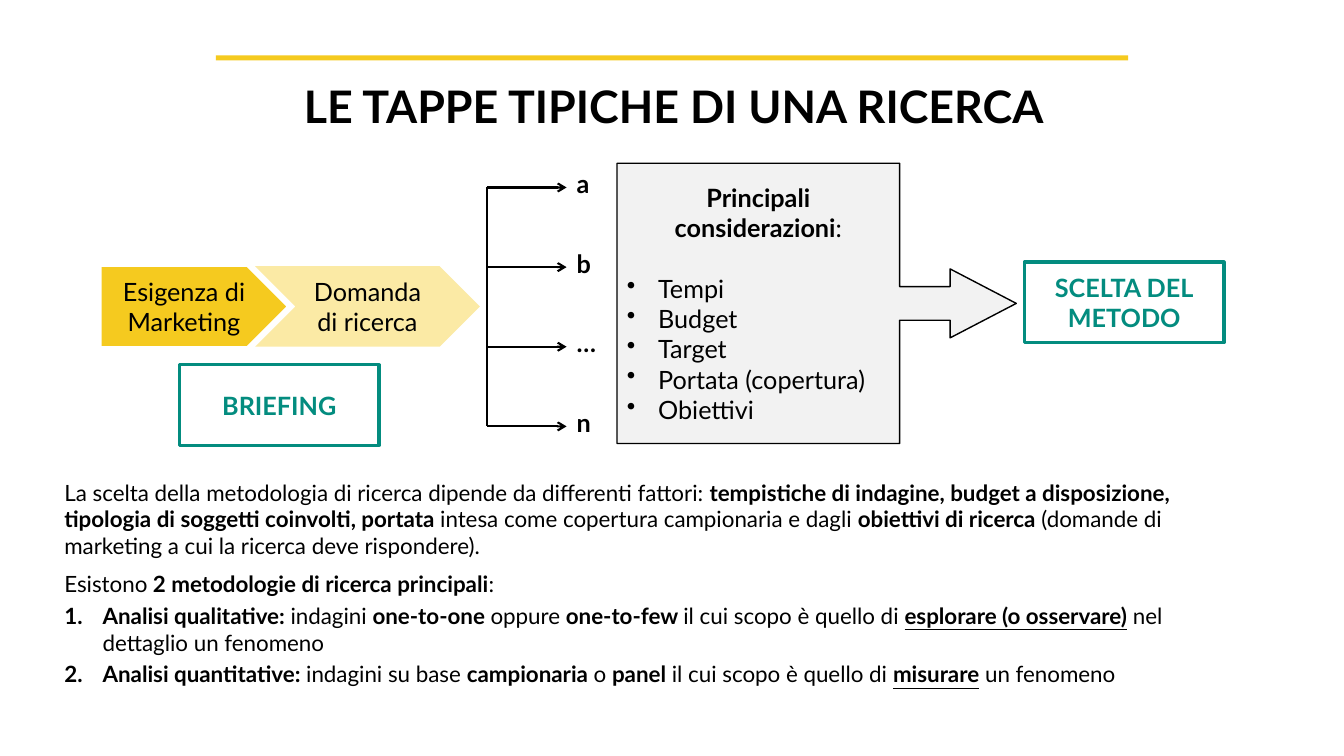
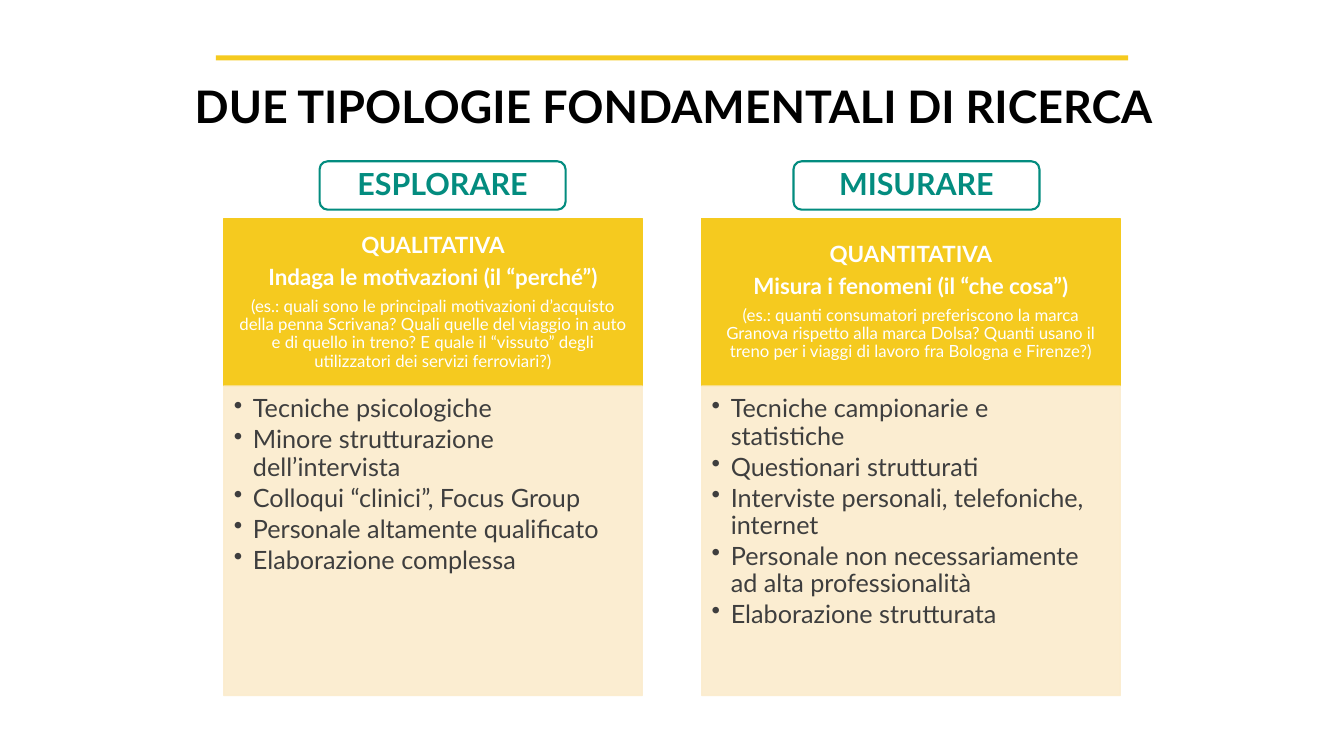
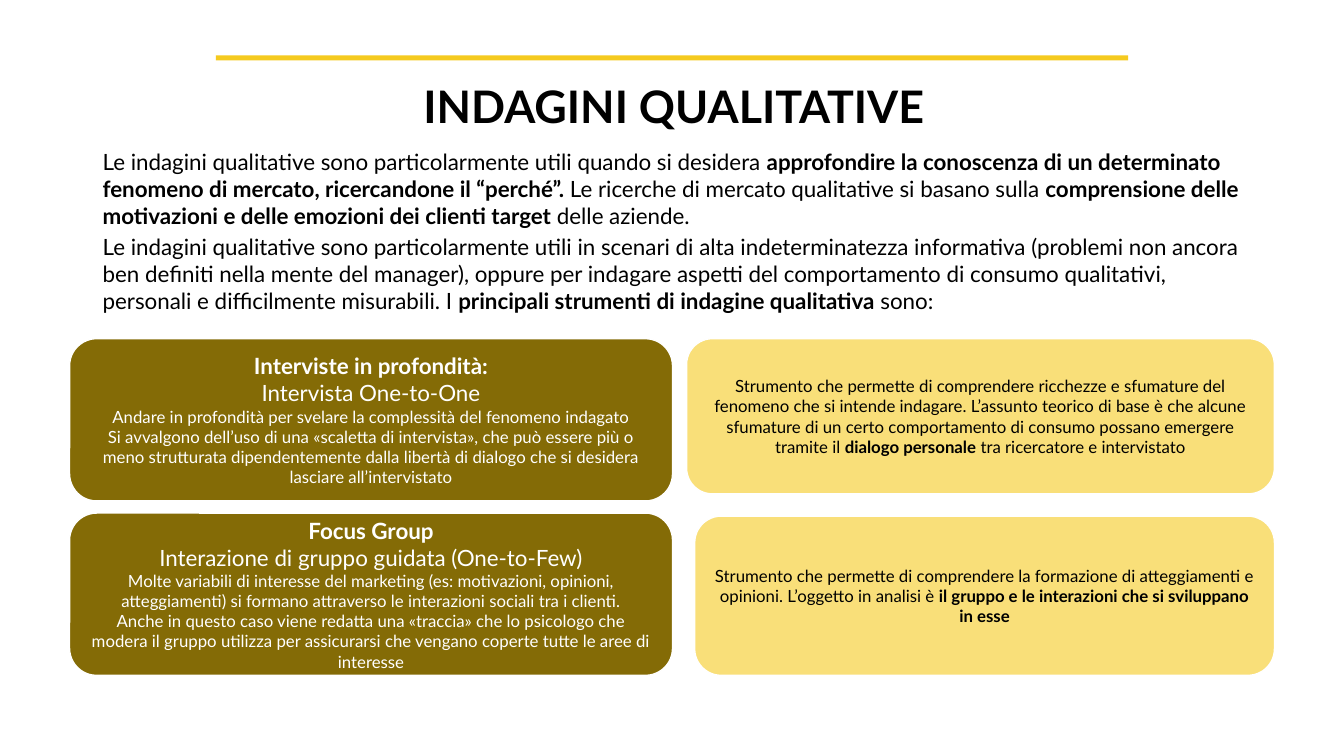
from lxml import etree
from pptx import Presentation
from pptx.dml.color import RGBColor
from pptx.enum.shapes import MSO_CONNECTOR, MSO_SHAPE
from pptx.enum.text import MSO_ANCHOR, PP_ALIGN
from pptx.oxml.ns import qn
from pptx.util import Inches, Pt

CENTER, LEFT = PP_ALIGN.CENTER, PP_ALIGN.LEFT
TOP, MIDDLE = MSO_ANCHOR.TOP, MSO_ANCHOR.MIDDLE
RECT, ROUND = MSO_SHAPE.RECTANGLE, MSO_SHAPE.ROUNDED_RECTANGLE
PENTAGON, CHEVRON = MSO_SHAPE.PENTAGON, MSO_SHAPE.CHEVRON
CALLOUT = MSO_SHAPE.RIGHT_ARROW_CALLOUT
STRAIGHT = MSO_CONNECTOR.STRAIGHT

FONT = "Lato"
COLORS = {
    "black": "000000", "white": "FFFFFF", "text": "3E3E3E", "teal": "038C7F",
    "yellow": "F5CA1F", "pale": "FBEAA5", "light": "F9DF79", "olive": "846B06",
    "cream": "FBECCD", "grey": "F2F2F2",
}

# Content: *...* is bold, _..._ is bold and underlined
STEPS_TITLE = "LE TAPPE TIPICHE DI UNA RICERCA"
BRANCHES = ["a", "b", "…", "n"]
CONSIDERATIONS = ["Tempi", "Budget", "Target", "Portata (copertura)", "Obiettivi"]
METHOD_CHOICE = (
    "La scelta della metodologia di ricerca dipende da differenti fattori: *tempistiche di indagine, "
    "budget a disposizione, tipologia di soggetti coinvolti, portata *intesa come copertura campionaria "
    "e dagli *obiettivi di ricerca* (domande di marketing a cui la ricerca deve rispondere).")
METHODS_INTRO = "Esistono* 2 metodologie di ricerca principali*:"
METHODS = [
    "*Analisi qualitative: *indagini *one-to-one *oppure *one-to-few *il cui scopo è quello di "
    "_esplorare (o osservare)_ nel dettaglio un fenomeno",
    "*Analisi quantitative: *indagini su base *campionaria *o *panel* il cui scopo è quello di "
    "_misurare_ un fenomeno",
]

TYPES_TITLE = "DUE TIPOLOGIE FONDAMENTALI DI RICERCA"
TYPES = [
    {"badge": "ESPLORARE", "name": "QUALITATIVA", "aim": "Indaga le motivazioni (il “perché”)",
     "example": "(es.: quali sono le principali motivazioni d’acquisto della penna Scrivana? Quali quelle "
                "del viaggio in auto e di quello in treno? E quale il “vissuto” degli utilizzatori dei "
                "servizi ferroviari?)",
     "traits": ["Tecniche psicologiche", "Minore strutturazione dell’intervista",
                "Colloqui “clinici”, Focus Group", "Personale altamente qualificato",
                "Elaborazione complessa"]},
    {"badge": "MISURARE", "name": "QUANTITATIVA", "aim": "Misura i fenomeni (il “che cosa”)",
     "example": "(es.: quanti consumatori preferiscono la marca Granova rispetto alla marca Dolsa? Quanti "
                "usano il treno per i viaggi di lavoro fra Bologna e Firenze?)",
     "traits": ["Tecniche campionarie e statistiche", "Questionari strutturati",
                "Interviste personali, telefoniche, internet",
                "Personale non necessariamente ad alta professionalità",
                "Elaborazione strutturata"]},
]

SURVEYS_TITLE = "INDAGINI QUALITATIVE"
SURVEYS_INTRO = [
    "Le indagini qualitative sono particolarmente utili quando si desidera *approfondire la conoscenza "
    "di un determinato fenomeno di mercato, ricercandone il “perché”. *Le ricerche di mercato qualitative "
    "si basano sulla *comprensione delle motivazioni e delle emozioni dei clienti target *delle aziende.",
    "Le indagini qualitative sono particolarmente utili in scenari di alta indeterminatezza informativa "
    "(problemi non ancora ben definiti nella mente del manager), oppure per indagare aspetti del "
    "comportamento di consumo qualitativi, personali e difficilmente misurabili. I *principali strumenti "
    "di indagine qualitativa *sono:",
]
TOOLS = [
    {"name": "*Interviste in profondità:*", "kind": "Intervista One-to-One",
     "details": ["Andare in profondità per svelare la complessità del fenomeno indagato",
                 "Si avvalgono dell’uso di una «scaletta di intervista», che può essere più o meno "
                 "strutturata dipendentemente dalla libertà di dialogo che si desidera lasciare "
                 "all’intervistato"],
     "purpose": "Strumento che permette di comprendere ricchezze e sfumature del fenomeno che si intende "
                "indagare. L’assunto teorico di base è che alcune sfumature di un certo comportamento di "
                "consumo possano emergere tramite il *dialogo personale* tra ricercatore e intervistato",
     "top": 3.36, "purpose_at": (6.81, 3.36, 5.83, 1.54)},
    {"name": "*Focus Group*", "kind": "Interazione di gruppo guidata (One-to-Few)",
     "details": ["Molte variabili di interesse del marketing (es: motivazioni, opinioni, atteggiamenti) si "
                 "formano attraverso le interazioni sociali tra i clienti.",
                 "Anche in questo caso viene redatta una «traccia» che lo psicologo che modera il gruppo "
                 "utilizza per assicurarsi che vengano coperte tutte le aree di interesse"],
     "purpose": "Strumento che permette di comprendere la formazione di atteggiamenti e opinioni. "
                "L’oggetto in analisi è *il gruppo e le interazioni che si sviluppano in esse*",
     "top": 5.09, "purpose_at": (6.89, 5.12, 5.75, 1.58)},
]


def rgb(name):
    return RGBColor.from_string(COLORS[name])


def add_spans(para, text):
    """Split marked text into runs."""
    bold = underline = False
    for part in text.replace("*", "|*|").replace("_", "|_|").split("|"):
        if part == "*":
            bold = not bold
        elif part == "_":
            underline = not underline
        elif part:
            span = para.add_run()
            span.text = part
            if bold or underline:
                span.font.bold = True
            if underline:
                span.font.underline = True


def add_bullet(para, indent, numbered):
    props = para._p.get_or_add_pPr()
    props.set("marL", str(Inches(indent)))
    props.set("indent", str(-Inches(indent)))
    if numbered:
        etree.SubElement(props, qn("a:buAutoNum"), type="arabicPeriod")
    else:
        etree.SubElement(props, qn("a:buChar"), char="•")


def line(text, size=18, color="black", bold=None, align=CENTER, before=0, after=0,
         spacing=None, indent=0, numbered=False):
    """Describe one paragraph."""
    return dict(text=text, size=size, color=color, bold=bold, align=align, before=before,
                after=after, spacing=spacing, indent=indent, numbered=numbered)


def write(shape, lines, anchor=MIDDLE, insets=(0.1, 0.05, 0.1, 0.05), wrap=True):
    frame = shape.text_frame
    frame.word_wrap = wrap
    frame.vertical_anchor = anchor
    frame.margin_left, frame.margin_top, frame.margin_right, frame.margin_bottom = map(Inches, insets)
    for index, item in enumerate(lines):
        para = frame.add_paragraph() if index else frame.paragraphs[0]
        if item["indent"]:
            add_bullet(para, item["indent"], item["numbered"])
        para.alignment = item["align"]
        if item["before"] and index:
            para.space_before = Pt(item["before"])
        if item["after"]:
            para.space_after = Pt(item["after"])
        if item["spacing"]:
            para.line_spacing = item["spacing"]
        para.font.name = FONT
        para.font.size = Pt(item["size"])
        para.font.color.rgb = rgb(item["color"])
        para.font.bold = item["bold"]
        add_spans(para, item["text"])


def add_text(page, at, lines, anchor=TOP, wrap=True):
    write(page.shapes.add_textbox(*map(Inches, at)), lines, anchor, wrap=wrap)


def add_box(page, kind, at, fill=None, border=None, width=1.0, alpha=None):
    box = page.shapes.add_shape(kind, *map(Inches, at))
    box.shadow.inherit = False
    if fill:
        box.fill.solid()
        box.fill.fore_color.rgb = rgb(fill)
    else:
        box.fill.background()
    if border:
        box.line.color.rgb = rgb(border)
        box.line.width = Pt(width)
    else:
        box.line.fill.background()
    if alpha:
        for color in box._element.spPr.iter(qn("a:srgbClr")):
            etree.SubElement(color, qn("a:alpha"), val=str(alpha * 1000))
    return box


def add_line(page, start, end, arrow=False):
    connector = page.shapes.add_connector(STRAIGHT, *map(Inches, start + end))
    connector.line.color.rgb = rgb("black")
    connector.line.width = Pt(1.5)
    if arrow:
        etree.SubElement(connector.line._ln, qn("a:tailEnd"), type="arrow")
    etree.SubElement(connector._element.spPr, qn("a:effectLst"))


def add_page(deck, title):
    """Blank page with the yellow band and the title."""
    page = deck.slides.add_slide(deck.slide_layouts[6])
    add_box(page, RECT, (2.14, 0.55, 9.05, 0.05), "yellow")
    add_text(page, (0.92, 0.9, 11.53, 0.37), [line(title, 32, bold=True, spacing=0.9)], MIDDLE)
    return page


def build_steps(deck):
    page = add_page(deck, STEPS_TITLE)

    # Need and question
    need = add_box(page, PENTAGON, (1, 2.64, 1.85, 0.8), "yellow", "white")
    write(need, [line("Esigenza di Marketing")])
    question = add_box(page, CHEVRON, (2.53, 2.64, 2.23, 0.8), "pale")
    write(question, [line("Domanda"), line("di ricerca")])

    # Branches
    left, right, top, step = 4.83, 5.62, 1.86, 0.79
    add_line(page, (left, top), (left, top + step * (len(BRANCHES) - 1)))
    for index, name in enumerate(BRANCHES):
        y = top + index * step
        add_line(page, (left, y), (right, y), arrow=True)
        add_text(page, (right, y - 0.24, 0.4, 0.4), [line(name, bold=True, align=LEFT)], wrap=False)

    # Considerations
    callout = add_box(page, CALLOUT, (6.12, 1.62, 3.96, 2.78), "grey", "black")
    for index, value in enumerate((0.12, 0.123, 0.236, 0.708)):
        callout.adjustments[index] = value
    write(callout, [line("*Principali considerazioni*:")] + [
        line(item, align=LEFT, indent=0.31, before=0 if index else 21.6)
        for index, item in enumerate(CONSIDERATIONS)])

    # Framed outcomes
    for left, top, words in ((10.16, 2.6, ["SCELTA DEL", "METODO"]), (1.78, 3.62, ["BRIEFING"])):
        frame = add_box(page, RECT, (left, top, 1.98, 0.8), border="teal", width=2.25)
        write(frame, [line(word, color="teal", bold=True) for word in words])

    # Explanation
    add_text(page, (0.54, 4.7, 12.02, 0.91), [line(METHOD_CHOICE, 16, align=LEFT)])
    add_text(page, (0.54, 5.61, 11.9, 1.29), [line(METHODS_INTRO, 16, align=LEFT)] + [
        line(item, 16, align=LEFT, before=3.2, indent=0.38, numbered=True) for item in METHODS])


def build_types(deck):
    page = add_page(deck, TYPES_TITLE)
    for index, kind in enumerate(TYPES):
        left = 2.22 + index * 4.74
        header = add_box(page, RECT, (left, 2.17, 4.15, 1.66), "yellow", "yellow")
        write(header, [
            line(kind["name"], 16, "white", True, after=5.6, spacing=0.9),
            line(kind["aim"], 16, "white", True, after=5.6, spacing=0.9),
            line(kind["example"], 12, "white", spacing=0.9),
        ], insets=(0.12, 0.07, 0.12, 0.07))
        body = add_box(page, RECT, (left, 3.83, 4.15, 3.07), "cream", "cream", alpha=90)
        write(body, [line(trait, color="text", align=LEFT, after=2.7, spacing=0.9, indent=0.19)
                     for trait in kind["traits"]], TOP, (0.1, 0.1, 0.14, 0.16))
        badge = add_box(page, ROUND, (3.17 + index * 4.7, 1.6, 2.44, 0.48), border="teal", width=1.5)
        write(badge, [line(kind["badge"], 21.7, "teal", True, spacing=0.9)])


def build_surveys(deck):
    page = add_page(deck, SURVEYS_TITLE)
    add_text(page, (0.92, 1.42, 11.54, 1.8),
             [line(text, 16, align=LEFT, before=3.2) for text in SURVEYS_INTRO])
    for tool in TOOLS:
        card = add_box(page, ROUND, (0.69, tool["top"], 5.98, 1.61), "olive", "white")
        write(card, [line(tool["name"], 16, "white"), line(tool["kind"], 16, "white")]
              + [line(detail, 12, "white") for detail in tool["details"]])
        purpose = add_box(page, ROUND, tool["purpose_at"], "light", "white")
        write(purpose, [line(tool["purpose"], 12)])


def main():
    deck = Presentation()
    deck.slide_width, deck.slide_height = Inches(13.33), Inches(7.5)
    build_steps(deck)
    build_types(deck)
    build_surveys(deck)
    deck.save("out.pptx")


if __name__ == "__main__":
    main()
